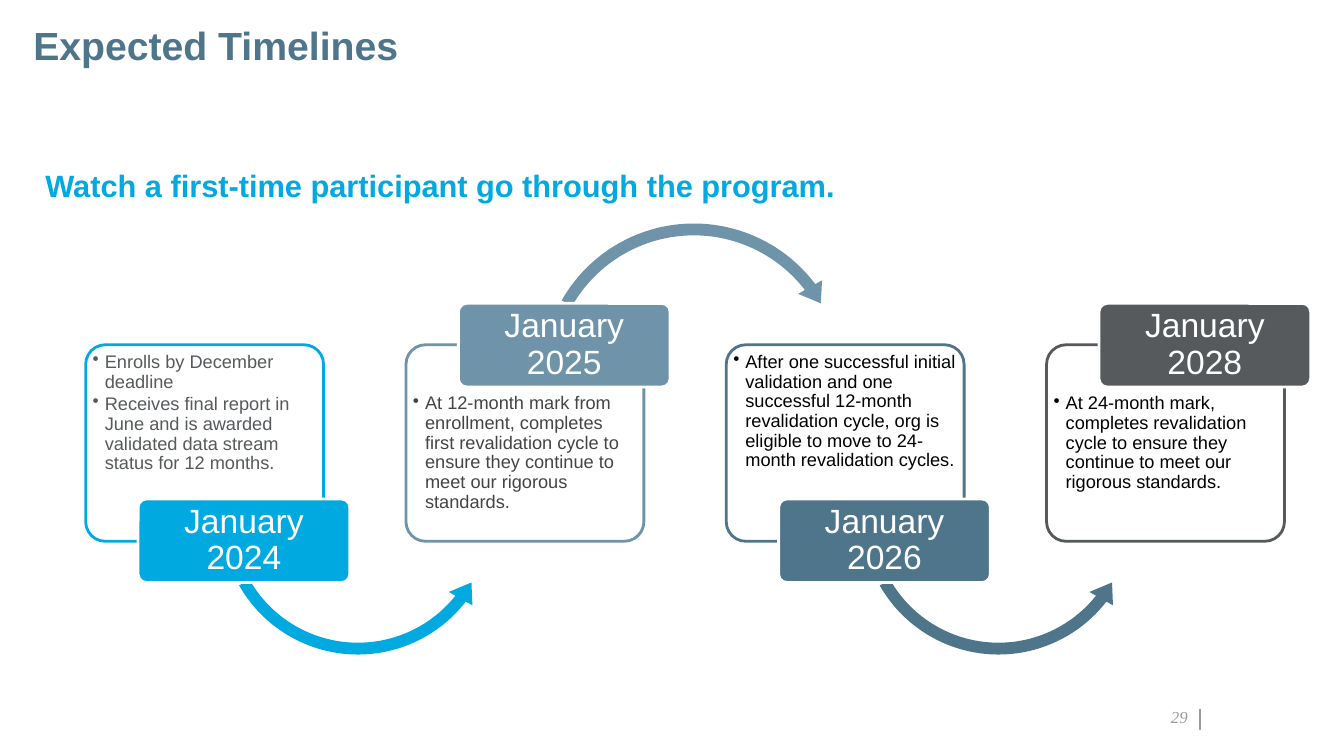
from lxml import etree
from pptx import Presentation
from pptx import util as u
from pptx.dml.color import RGBColor
from pptx.enum import shapes, text
from pptx.oxml.ns import qn

COLORS = {
    "white": "FFFFFF", "black": "000000", "cyan": "00A9E0", "steel": "6F94AA",
    "slate": "4F758B", "graphite": "565A5C", "dark": "444444", "silver": "989D9F",
}
LOW_ARROW = (shapes.MSO_SHAPE.LEFT_CIRCULAR_ARROW, 3.71, 2.86,
             (0.041, 5.116, 22.871, 90.245, 0.047))
HIGH_ARROW = (shapes.MSO_SHAPE.CIRCULAR_ARROW, 2.14, 3.17,
              (0.037, 4.586, 193.659, 125.755, 0.043))
STEPS = [
    ("January 2024", "cyan", "graphite",
     ["Enrolls by December deadline",
      "Receives final report in June and is awarded validated data stream status for 12 months."]),
    ("January 2025", "steel", "dark",
     ["At 12-month mark from enrollment, completes first revalidation cycle to ensure "
      "they continue to meet our rigorous standards."]),
    ("January 2026", "slate", "black",
     ["After one successful initial validation and one successful 12-month revalidation "
      "cycle, org is eligible to move to 24-month revalidation cycles."]),
    ("January 2028", "graphite", "black",
     ["At 24-month mark, completes revalidation cycle to ensure they continue to meet "
      "our rigorous standards."]),
]


class TimelineSlide:
    """Draws styled elements on one slide."""

    def __init__(self, slide):
        self.slide = slide
        self.font = "Arial"

    def color(self, name):
        return RGBColor.from_string(COLORS[name])

    def fill_text(self, shape, lines, size, color, insets=(0, 0, 0, 0), align="LEFT",
                  anchor="TOP", spacing=0.9, bullets=False, bold=False, italic=False,
                  font=None):
        frame = shape.text_frame
        frame.text = "\n".join(lines)
        frame.word_wrap = True
        frame.auto_size = text.MSO_AUTO_SIZE.NONE
        frame.vertical_anchor = text.MSO_ANCHOR[anchor]
        (frame.margin_left, frame.margin_top,
         frame.margin_right, frame.margin_bottom) = map(u.Inches, insets)
        for paragraph in frame.paragraphs:
            paragraph.alignment = text.PP_ALIGN[align]
            paragraph.line_spacing = spacing
            paragraph.space_before = u.Pt(0)
            if bullets:
                self.bullet(paragraph)
            for run in paragraph.runs:
                run.font.name = font or self.font
                run.font.size = u.Pt(size)
                run.font.bold = bold
                run.font.italic = italic
                run.font.color.rgb = self.color(color)

    def bullet(self, paragraph):
        paragraph.level = 1
        paragraph.space_after = u.Pt(2)
        properties = paragraph._p.get_or_add_pPr()
        properties.set("marL", str(u.Inches(0.12)))
        properties.set("indent", str(u.Inches(-0.12)))
        etree.SubElement(properties, qn("a:buChar"), char="•")

    def title(self, line, at, **style):
        heading = self.slide.shapes.title
        heading.left, heading.top, heading.width, heading.height = map(u.Inches, at)
        self.fill_text(heading, [line], **style)

    def text(self, lines, at, **style):
        self.fill_text(self.slide.shapes.add_textbox(*map(u.Inches, at)), lines, **style)

    def shape(self, kind, at, fill, line=None, adjustments=(0.1,)):
        drawn = self.slide.shapes.add_shape(kind, *map(u.Inches, at))
        drawn.shadow.inherit = False
        for index, value in enumerate(adjustments):
            drawn.adjustments[index] = value
        drawn.fill.solid()
        drawn.fill.fore_color.rgb = self.color(fill)
        if line:
            drawn.line.color.rgb = self.color(line)
            drawn.line.width = u.Pt(2)
        else:
            drawn.line.fill.background()
        return drawn

    def rule(self, start, end, color):
        line = self.slide.shapes.add_connector(
            shapes.MSO_CONNECTOR.STRAIGHT, *map(u.Inches, start + end))
        line.line.color.rgb = self.color(color)
        line.line.width = u.Pt(1)
        etree.SubElement(line._element.spPr, qn("a:effectLst"))

    def step(self, left, date, accent, ink, details, high, arrow):
        rounded = shapes.MSO_SHAPE.ROUNDED_RECTANGLE
        self.shape(rounded, (left, 3.42, 2.36, 1.95), "white", accent)
        self.text(details, (left + 0.04, 3.88 if high else 3.47, 2.27, 1.44),
                  size=13, color=ink, insets=(0.03,) * 4, bullets=True)
        if arrow:
            kind, top, side, adjustments = arrow
            self.shape(kind, (left + 1.27, top, side, side), accent, adjustments=adjustments)
        label = self.shape(rounded, (left + 0.52, 3.01 if high else 4.95, 2.1, 0.83),
                           accent, "white")
        self.fill_text(label, [date], size=24, color="white", insets=(0.05, 0.03, 0.05, 0.03),
                       align="CENTER", anchor="MIDDLE")


def main():
    deck = Presentation()
    deck.slide_width, deck.slide_height = u.Inches(13.33), u.Inches(7.5)
    timeline = TimelineSlide(deck.slides.add_slide(deck.slide_layouts[5]))

    timeline.rule((11.9, 7.03), (11.9, 7.24), "silver")
    timeline.title("Expected Timelines", (0.33, 0.26, 12.67, 0.41),
                   size=28, color="slate", insets=(0, 0, 0.1, 0), bold=True)

    pitch = 9.53 / (len(STEPS) - 1)
    for index, (date, accent, ink, details) in enumerate(STEPS):
        high = index % 2 == 1
        arrow = HIGH_ARROW if high else LOW_ARROW
        if index == len(STEPS) - 1:
            arrow = None
        timeline.step(0.85 + index * pitch, date, accent, ink, details, high, arrow)

    timeline.text(["29"], (10.99, 7.03, 0.79, 0.18), size=12, color="silver", align="RIGHT",
                  anchor="BOTTOM", spacing=1.0, italic=True, font="Times New Roman")
    timeline.text(["Watch a first-time participant go through the program."],
                  (0.45, 1.7, 9.18, 0.52), size=22, color="cyan", bold=True)
    deck.save("out.pptx")


if __name__ == "__main__":
    main()
